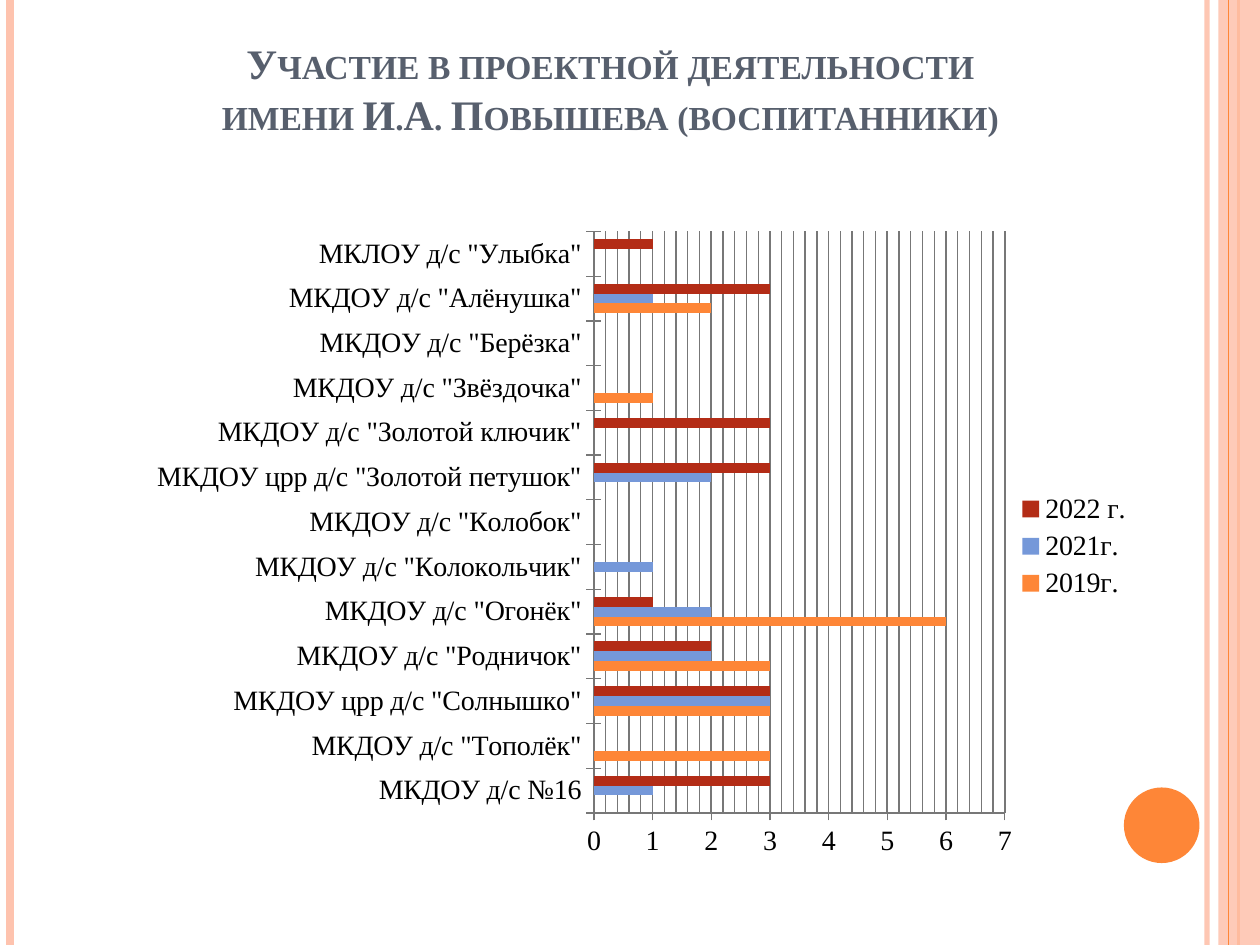
from lxml import etree
from pptx import Presentation
from pptx.chart.data import CategoryChartData
from pptx.dml.color import RGBColor
from pptx.enum.chart import XL_CHART_TYPE, XL_LEGEND_POSITION, XL_TICK_MARK
from pptx.enum.shapes import MSO_CONNECTOR, MSO_SHAPE
from pptx.enum.text import MSO_ANCHOR, PP_ALIGN
from pptx.oxml import parse_xml
from pptx.oxml.ns import nsdecls, qn
from pptx.util import Inches, Pt

BAR_CLUSTERED = XL_CHART_TYPE.BAR_CLUSTERED
LEGEND_RIGHT = XL_LEGEND_POSITION.RIGHT
TICK_CROSS = XL_TICK_MARK.CROSS
STRAIGHT = MSO_CONNECTOR.STRAIGHT
RECTANGLE, OVAL = MSO_SHAPE.RECTANGLE, MSO_SHAPE.OVAL
BOTTOM, CENTER = MSO_ANCHOR.BOTTOM, PP_ALIGN.CENTER

FONT = "Times New Roman"
ORANGE, PEACH, BLUE, RED = "FE8637", "FEC3AE", "7598D9", "B32C16"
SLATE, BLACK, GRAY = "575F6D", "000000", "777777"

TITLE = "Участие в проектной деятельности\vимени И.А. Повышева (воспитанники)"
YEARS = [("2019г.", ORANGE), ("2021г.", BLUE), ("2022 г.", RED)]
KINDERGARTENS = [
    ("МКДОУ д/с №16", (None, 1, 3)),
    ('МКДОУ д/с "Тополёк"', (3, None, None)),
    ('МКДОУ црр д/с "Солнышко"', (3, 3, 3)),
    ('МКДОУ д/с "Родничок"', (3, 2, 2)),
    ('МКДОУ д/с "Огонёк"', (6, 2, 1)),
    ('МКДОУ д/с "Колокольчик"', (None, 1, None)),
    ('МКДОУ д/с "Колобок"', (None, None, None)),
    ('МКДОУ црр д/с "Золотой петушок"', (None, 2, 3)),
    ('МКДОУ д/с "Золотой ключик"', (None, None, 3)),
    ('МКДОУ д/с "Звёздочка"', (1, None, None)),
    ('МКДОУ д/с "Берёзка"', (None, None, None)),
    ('МКДОУ д/с "Алёнушка"', (2, 1, 3)),
    ('МКЛОУ д/с "Улыбка"', (None, None, 1)),
]


def color(value):
    return RGBColor.from_string(value)


def set_opacity(properties, percent):
    """Add an alpha value to each solid colour inside the shape properties."""
    for rgb in properties.iter(qn("a:srgbClr")):
        etree.SubElement(rgb, qn("a:alpha")).set("val", str(percent * 1000))


class SlideBuilder:
    def __init__(self, presentation):
        self.height = presentation.slide_height
        self.slide = presentation.slides.add_slide(presentation.slide_layouts[5])

    def vertical_line(self, x, line_color, width, opacity=100):
        line = self.slide.shapes.add_connector(
            STRAIGHT, Inches(x), 0, Inches(x), self.height)
        line.line.color.rgb = color(line_color)
        line.line.width = Pt(width)
        properties = line._element.spPr
        if opacity < 100:
            set_opacity(properties, opacity)
        etree.SubElement(properties, qn("a:effectLst"))

    def filled_shape(self, kind, box, fill_color, opacity=100):
        shape = self.slide.shapes.add_shape(kind, *map(Inches, box))
        shape.shadow.inherit = False
        shape.fill.solid()
        shape.fill.fore_color.rgb = color(fill_color)
        shape.line.fill.background()
        if opacity < 100:
            set_opacity(shape._element.spPr, opacity)

    def title(self, text, box, size):
        title = self.slide.shapes.title
        title.left, title.top, title.width, title.height = map(Inches, box)
        frame = title.text_frame
        frame.text = text
        frame.word_wrap = True
        frame.vertical_anchor = BOTTOM
        frame.margin_bottom = Inches(0.53)
        paragraph = frame.paragraphs[0]
        paragraph.alignment = CENTER
        for run in paragraph.runs:
            run.font.name, run.font.size, run.font.bold = FONT, Pt(size), True
            run.font.color.rgb = color(SLATE)
            run.font._element.set("cap", "small")

    def bar_chart(self, box, plot_box):
        data = CategoryChartData()
        data.categories = [name for name, _ in KINDERGARTENS]
        for index, (year, _) in enumerate(YEARS):
            data.add_series(year, [values[index] for _, values in KINDERGARTENS])
        chart = self.slide.shapes.add_chart(
            BAR_CLUSTERED, *map(Inches, box), data).chart
        chart.has_title = False
        chart.font.name, chart.font.size = FONT, Pt(16)
        chart.font.color.rgb = color(BLACK)

        # Bars
        plot = chart.plots[0]
        plot.gap_width, plot.overlap = 150, 0
        plot.vary_by_categories = False
        for series, (_, fill_color) in zip(plot.series, YEARS):
            series.format.fill.solid()
            series.format.fill.fore_color.rgb = color(fill_color)

        # Axes and gridlines
        values = chart.value_axis
        values.minimum_scale, values.maximum_scale = 0, 7
        values.major_unit, values.minor_unit = 1, 0.2
        values.has_major_gridlines = values.has_minor_gridlines = True
        for part in (values, chart.category_axis, values.major_gridlines):
            part.format.line.color.rgb = color(GRAY)
            part.format.line.width = Pt(0.75)
        values.major_gridlines.format.line.width = Pt(1)
        values._element.find(qn("c:minorGridlines")).append(parse_xml(
            f'<c:spPr {nsdecls("c", "a")}><a:ln w="{Pt(0.75)}"><a:solidFill>'
            f'<a:srgbClr val="{GRAY}"/></a:solidFill></a:ln></c:spPr>'))
        for axis in (values, chart.category_axis):
            axis.major_tick_mark = TICK_CROSS

        # Legend
        chart.has_legend = True
        chart.legend.position = LEGEND_RIGHT
        chart.legend.include_in_layout = False
        self.place_plot(chart, plot_box)

    def place_plot(self, chart, plot_box):
        area = chart._chartSpace.chart.plotArea
        for old in area.findall(qn("c:layout")):
            area.remove(old)
        parts = "".join(f'<c:{name} val="{value}"/>'
                        for name, value in zip("xywh", plot_box))
        area.insert(0, parse_xml(
            f'<c:layout {nsdecls("c")}><c:manualLayout>'
            '<c:layoutTarget val="inner"/>'
            '<c:xMode val="edge"/><c:yMode val="edge"/>'
            f"{parts}</c:manualLayout></c:layout>"))


def main():
    presentation = Presentation()
    presentation.slide_width, presentation.slide_height = Inches(10), Inches(7.5)
    builder = SlideBuilder(presentation)

    # Side stripes and circle
    builder.vertical_line(9.58, PEACH, 3, opacity=93)
    builder.vertical_line(0.08, PEACH, 4.5)
    builder.vertical_line(9.83, ORANGE, 1.5)
    builder.filled_shape(RECTANGLE, (9.67, 0, 0.33, 7.5), PEACH, opacity=87)
    builder.vertical_line(9.75, ORANGE, 0.75)
    builder.filled_shape(OVAL, (8.92, 6.25, 0.6, 0.6), ORANGE)

    # Title and chart
    builder.title(TITLE, (0.67, 0.29, 8.35, 1.34), 24)
    builder.bar_chart((0.51, 1.62, 8.58, 5.43), (0.49, 0.04, 0.38, 0.85))

    presentation.save("out.pptx")


if __name__ == "__main__":
    main()
